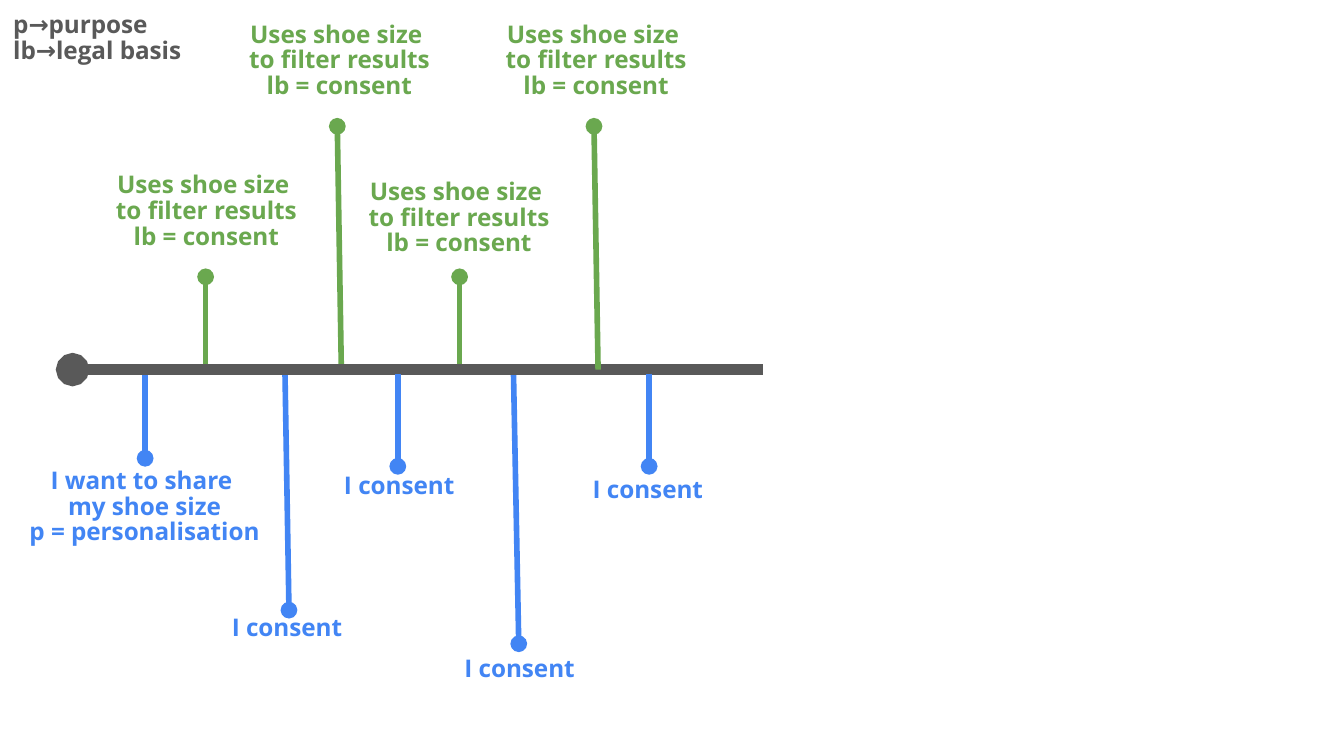
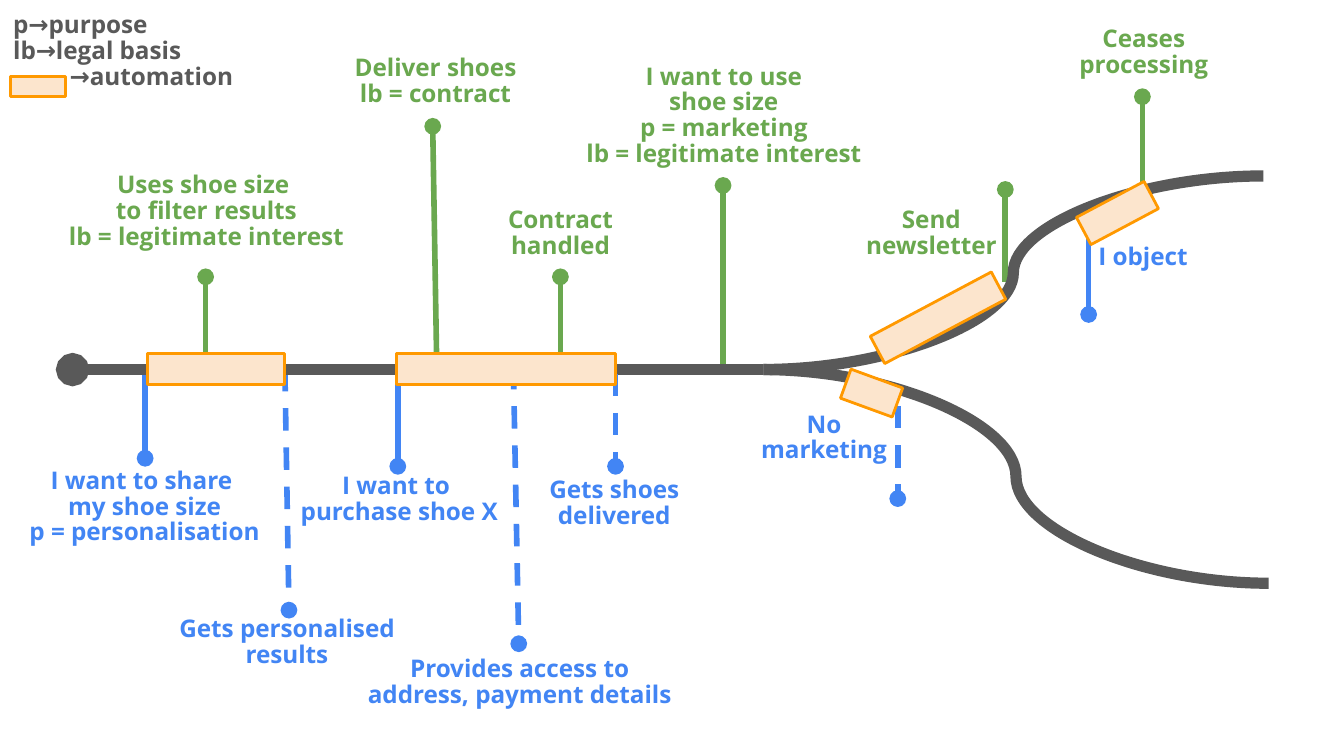
import pptx
import pptx.dml.color
import pptx.enum.dml
import pptx.enum.shapes
import pptx.enum.text
import pptx.util
from pptx.oxml.ns import qn
from lxml import etree

PX = pptx.util.Inches(1) // 100
FONT = "Open Sans"
GREEN = pptx.dml.color.RGBColor(0x6A, 0xA8, 0x4F)
BLUE = pptx.dml.color.RGBColor(0x42, 0x85, 0xF4)
GREY = pptx.dml.color.RGBColor(0x59, 0x59, 0x59)
PEACH = pptx.dml.color.RGBColor(0xFC, 0xE5, 0xCD)
ORANGE = pptx.dml.color.RGBColor(0xFF, 0x99, 0x00)
CENTER = pptx.enum.text.PP_ALIGN.CENTER
LEFT = pptx.enum.text.PP_ALIGN.LEFT
STRAIGHT = pptx.enum.shapes.MSO_CONNECTOR.STRAIGHT
CURVE = pptx.enum.shapes.MSO_CONNECTOR.CURVE


def add_text(slide, box, lines, color=GREEN, align=CENTER, last_indent=0):
    shape = slide.shapes.add_textbox(*[value * PX for value in box])
    frame = shape.text_frame
    frame.word_wrap = True
    frame.margin_left = frame.margin_right = 10 * PX
    frame.margin_top = frame.margin_bottom = 10 * PX
    for index, line in enumerate(lines):
        paragraph = frame.paragraphs[0] if index == 0 else frame.add_paragraph()
        paragraph.alignment = align
        paragraph.line_spacing = 0.88
        run = paragraph.add_run()
        run.text = line
        run.font.name = FONT
        run.font.size = pptx.util.Pt(13)
        run.font.bold = True
        run.font.color.rgb = color
    if last_indent:
        properties = paragraph._p.get_or_add_pPr()
        properties.set("marL", str(last_indent * PX))
        properties.set("indent", "0")


def add_line(slide, points, color, width=3, kind=STRAIGHT, dashed=False, oval=None):
    connector = slide.shapes.add_connector(kind, *[value * PX for value in points])
    connector.line.color.rgb = color
    connector.line.width = pptx.util.Pt(width)
    if dashed:
        connector.line.dash_style = pptx.enum.dml.MSO_LINE.DASH
    if oval:
        etree.SubElement(connector.line._get_or_add_ln(), qn("a:" + oval), type="oval")
    etree.SubElement(connector._element.spPr, qn("a:effectLst"))
    return connector


def add_company_stem(slide, *points):
    return add_line(slide, points, GREEN, oval="headEnd")


def add_person_stem(slide, *points, dashed=False):
    return add_line(slide, points, BLUE, dashed=dashed, oval="tailEnd")


def add_automation(slide, left, top, width, height=23, rotation=0):
    shape = slide.shapes.add_shape(
        pptx.enum.shapes.MSO_SHAPE.RECTANGLE,
        left * PX, top * PX, width * PX, height * PX)
    shape.rotation = rotation
    shape.shadow.inherit = False
    shape.fill.solid()
    shape.fill.fore_color.rgb = PEACH
    shape.line.color.rgb = ORANGE
    shape.line.width = pptx.util.Pt(1.5)
    return shape


def add_timeline_start(slide):
    add_company_stem(slide, 153, 206, 153, 275)
    add_person_stem(slide, 108, 272, 108, 341)
    add_line(slide, (54, 275, 568, 275), GREY, width=6, oval="headEnd")
    add_person_stem(slide, 296, 278, 296, 347)
    add_text(slide, (-14, 339, 243, 87),
             ["I want to share ", "my shoe size", "p = personalisation"], BLUE)


def build_consent_slide(slide):
    add_company_stem(slide, 342, 206, 342, 275)
    add_person_stem(slide, 382, 273, 386, 479)
    add_company_stem(slide, 251, 94, 254, 275)
    add_person_stem(slide, 212, 273, 215, 454)
    add_timeline_start(slide)
    add_person_stem(slide, 483, 278, 483, 347)
    add_company_stem(slide, 442, 94, 445, 275)
    add_text(slide, (0, 0, 158, 62), ["p→purpose", "lb→legal basis"], GREY, LEFT)
    for left, top in ((32, 119), (131, 7), (220, 124), (322, 7)):
        add_text(slide, (left, top, 243, 87),
                 ["Uses shoe size ", "to filter results", "lb = consent"])
    for left, top, width in ((92, 449, 243), (213, 343, 168),
                             (262, 479, 249), (423, 346, 118)):
        add_text(slide, (left, top, width, 62), ["I consent"], BLUE)


def build_automation_slide(slide):
    add_company_stem(slide, 850, 72, 850, 141)
    add_person_stem(slide, 810, 165, 810, 234)
    add_company_stem(slide, 748, 141, 748, 210)
    add_person_stem(slide, 668, 302, 668, 371, dashed=True)
    add_company_stem(slide, 538, 138, 538, 275)
    add_company_stem(slide, 417, 206, 417, 275)
    add_person_stem(slide, 382, 273, 386, 479, dashed=True)
    add_company_stem(slide, 322, 94, 325, 275)
    results_stem = add_person_stem(slide, 212, 273, 215, 454, dashed=True)
    add_timeline_start(slide)
    add_person_stem(slide, 458, 278, 458, 347, dashed=True)
    for end_x, end_y in ((940, 131), (944, 434)):
        add_line(slide, (568, 275, end_x, end_y), GREY, width=6, kind=CURVE)

    add_text(slide, (0, 0, 187, 87), ["p→purpose", "lb→legal basis", "→automation"],
             GREY, LEFT, last_indent=42)
    company_labels = (
        ((32, 119, 243, 87),
         ["Uses shoe size ", "to filter results", "lb = legitimate interest"]),
        ((249, 32, 150, 62), ["Deliver shoes", "lb = contract"]),
        ((342, 145, 150, 62), ["Contract handled"]),
        ((417, 38, 243, 101),
         ["I want to use", "shoe size", "p = marketing", "lb = legitimate interest"]),
        ((618, 145, 150, 62), ["Send newsletter"]),
        ((776, 10, 150, 62), ["Ceases processing"]),
    )
    person_labels = (
        ((92, 449, 243, 62), ["Gets personalised", "results"]),
        ((213, 343, 168, 62), ["I want to ", "purchase shoe X"]),
        ((262, 479, 249, 62), ["Provides access to address, payment details"]),
        ((398, 346, 118, 62), ["Gets shoes delivered"]),
        ((554, 297, 118, 62), ["No marketing"]),
        ((804, 173, 93, 35), ["I object"]),
    )
    for color, labels in ((GREEN, company_labels), (BLUE, person_labels)):
        for box, lines in labels:
            add_text(slide, box, lines, color)

    filtering = add_automation(slide, 110, 263, 102)
    results_stem.begin_connect(filtering, 3)
    add_automation(slide, 295, 263, 163)
    add_automation(slide, 647, 225, 102, rotation=332)
    add_automation(slide, 628, 281, 41, rotation=20)
    add_automation(slide, 803, 147, 57, rotation=332)
    add_automation(slide, 8, 57, 41, height=15)


def main():
    presentation = pptx.Presentation()
    presentation.slide_width = 1000 * PX
    presentation.slide_height = pptx.util.Inches(5.625)
    for build in (build_consent_slide, build_automation_slide):
        build(presentation.slides.add_slide(presentation.slide_layouts[6]))
    presentation.save("out.pptx")


if __name__ == "__main__":
    main()
